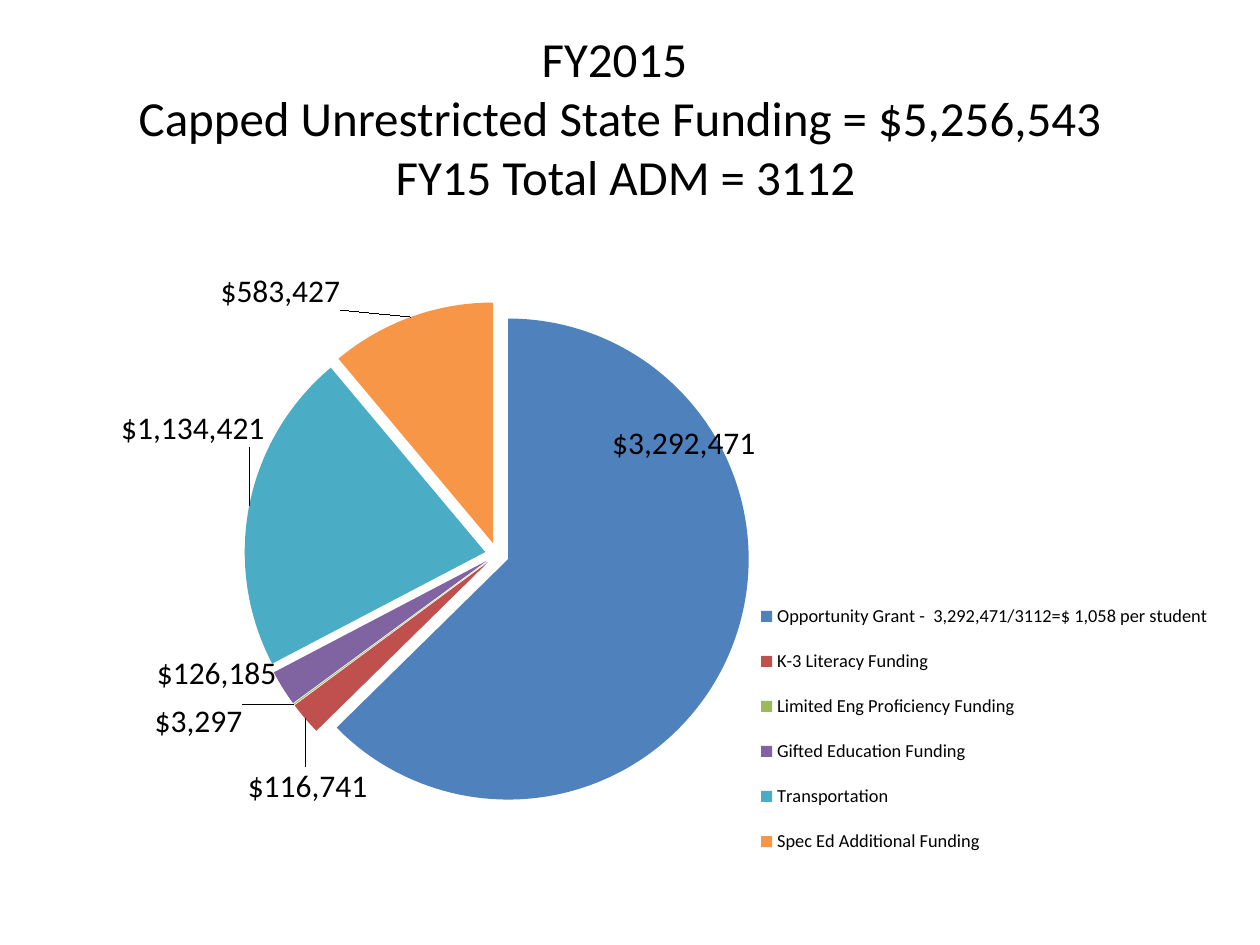
from lxml import etree
from pptx import Presentation
from pptx.chart.data import CategoryChartData
from pptx.dml.color import RGBColor
from pptx.enum.chart import XL_CHART_TYPE, XL_LABEL_POSITION, XL_LEGEND_POSITION
from pptx.enum.text import MSO_ANCHOR, PP_ALIGN
from pptx.oxml.ns import qn
from pptx.util import Inches, Pt

PIE = XL_CHART_TYPE.PIE
OUTSIDE_END = XL_LABEL_POSITION.OUTSIDE_END
RIGHT = XL_LEGEND_POSITION.RIGHT
MIDDLE = MSO_ANCHOR.MIDDLE
CENTER = PP_ALIGN.CENTER

FONT = "Calibri"
BLACK = RGBColor(0x00, 0x00, 0x00)
BLUE = RGBColor(0x4F, 0x81, 0xBD)
RED = RGBColor(0xC0, 0x50, 0x4D)
GREEN = RGBColor(0x9B, 0xBB, 0x59)
PURPLE = RGBColor(0x80, 0x64, 0xA2)
TEAL = RGBColor(0x4B, 0xAC, 0xC6)
ORANGE = RGBColor(0xF7, 0x96, 0x46)
DOLLARS = '"$"#,##0'

TITLE_LINES = [
    "FY2015 ",
    "Capped Unrestricted State Funding = $5,256,543",
    " FY15 Total ADM = 3112",
]

# Category, amount, slice colour, label shift as fractions of the chart
FUNDING = [
    ("Opportunity Grant -  3,292,471/3112=$ 1,058 per student",
     3292471, BLUE, (-0.11, -0.37)),
    ("K-3 Literacy Funding", 116741, RED, (0.06, 0.07)),
    ("Limited Eng Proficiency Funding", 3297, GREEN, (-0.04, -0.01)),
    ("Gifted Education Funding", 126185, PURPLE, (0, -0.06)),
    ("Transportation", 1134421, TEAL, (0.02, -0.09)),
    ("Spec Ed Additional Funding", 583427, ORANGE, (-0.06, 0)),
]


def style_font(font, size):
    font.name = FONT
    font.size = Pt(size)
    font.color.rgb = BLACK


def make_layout(**settings):
    layout = etree.Element(qn("c:layout"))
    manual = etree.SubElement(layout, qn("c:manualLayout"))
    for tag, value in settings.items():
        etree.SubElement(manual, qn(f"c:{tag}")).set("val", str(value))
    return layout


def set_layout(parent, after, layout):
    """Put the layout right after the named child, replacing any other."""
    for old in parent.findall(qn("c:layout")):
        parent.remove(old)
    anchor = parent.find(qn(after)) if after else None
    if anchor is None:
        parent.insert(0, layout)
    else:
        anchor.addnext(layout)


def add_title(slide, left, top, width, height):
    frame = slide.shapes.add_textbox(left, top, width, height).text_frame
    frame.word_wrap = True
    frame.vertical_anchor = MIDDLE
    paragraph = frame.paragraphs[0]
    paragraph.alignment = CENTER
    for index, line in enumerate(TITLE_LINES):
        if index:
            paragraph.add_line_break()
        run = paragraph.add_run()
        run.text = line
        style_font(run.font, 28)


def style_slices(series):
    for index, (_, _, color, (dx, dy)) in enumerate(FUNDING):
        point = series.points[index]
        point.format.fill.solid()
        point.format.fill.fore_color.rgb = color
        point.data_label.position = OUTSIDE_END
        style_font(point.data_label.font, 18)

        # Shift the label and give it the dollar format
        label = series._element.xpath(f"c:dLbls/c:dLbl[c:idx/@val='{index}']")[0]
        set_layout(label, "c:idx", make_layout(x=dx, y=dy))
        number_format = etree.Element(qn("c:numFmt"))
        number_format.set("formatCode", DOLLARS)
        number_format.set("sourceLinked", "0")
        label.find(qn("c:layout")).addnext(number_format)

    # Pull all slices apart
    explosion = etree.Element(qn("c:explosion"))
    explosion.set("val", "5")
    series._element.find(qn("c:dPt")).addprevious(explosion)


def add_funding_pie(slide, left, top, width, height):
    data = CategoryChartData(number_format=DOLLARS)
    data.categories = [name for name, *_ in FUNDING]
    data.add_series("Series 1", [amount for _, amount, *_ in FUNDING])
    chart = slide.shapes.add_chart(PIE, left, top, width, height, data).chart
    chart.has_title = False
    style_font(chart.font, 18)

    # Slices and their labels
    plot = chart.plots[0]
    plot.vary_by_categories = True
    series = plot.series[0]
    style_slices(series)
    labels = series.data_labels
    labels.show_value = True
    labels.position = OUTSIDE_END
    labels.number_format = DOLLARS
    labels.number_format_is_linked = False
    style_font(labels.font, 18)

    # Keep each amount on one line
    for body in series._element.xpath("c:dLbls//a:bodyPr"):
        body.set("wrap", "none")

    plot_area = chart._chartSpace.find(".//" + qn("c:plotArea"))
    set_layout(plot_area, None, make_layout(
        layoutTarget="inner", xMode="edge", yMode="edge",
        x=0.13, y=0.08, w=0.45, h=0.81))

    # Legend at the lower right
    chart.has_legend = True
    legend = chart.legend
    legend.position = RIGHT
    legend.include_in_layout = False
    style_font(legend.font, 10.5)
    set_layout(legend._element, "c:legendPos", make_layout(
        xMode="edge", yMode="edge", x=0.58, y=0.53, w=0.41, h=0.47))


def main():
    presentation = Presentation()
    presentation.slide_width = Inches(10)
    presentation.slide_height = Inches(7.5)
    slide = presentation.slides.add_slide(presentation.slide_layouts[6])
    add_title(slide, Inches(0.17), Inches(0.3), Inches(9.5), Inches(1.25))
    add_funding_pie(slide, Inches(0.75), Inches(2), Inches(9), Inches(4.95))
    presentation.save("out.pptx")


if __name__ == "__main__":
    main()
